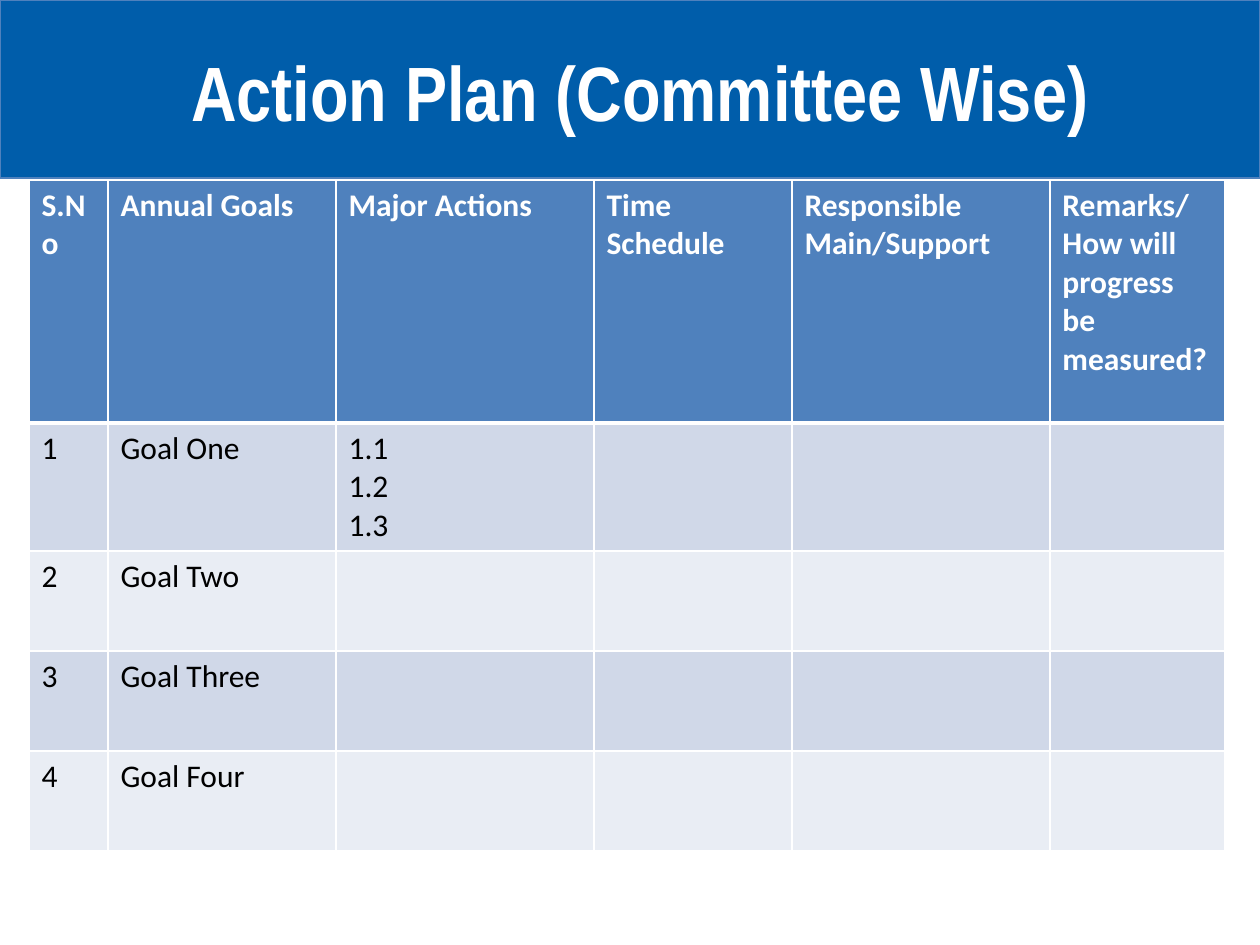
from lxml.etree import SubElement as Sub
from pptx import Presentation
from pptx.dml.color import RGBColor
from pptx.enum.shapes import MSO_SHAPE as Shape
from pptx.enum.text import MSO_ANCHOR as Anchor, PP_ALIGN as Align
from pptx.oxml.ns import qn
from pptx.util import Pt

PX = 914400 / 126
WHITE, BLUE = "FFFFFF", "4F81BD"


def px(*nums):
    return [round(n * PX) for n in nums]


def color(code):
    return RGBColor.from_string(code)


deck = Presentation()
deck.slide_width, deck.slide_height = px(1260, 945)
slide = deck.slides.add_slide(deck.slide_layouts[5])

# Title
title = slide.shapes.title
title.left, title.top, title.width, title.height = px(47, 48, 1187, 103)
frame = title.text_frame
frame.text = "Action Plan (Committee Wise)"
frame.word_wrap = True
frame.vertical_anchor = Anchor.MIDDLE
para = frame.paragraphs[0]
para.alignment = Align.CENTER
para.line_spacing = 0.8
font = para.runs[0].font
font.name, font.size, font.bold = "Arial Narrow", Pt(44), True
font.color.rgb = color(WHITE)

# Blue band behind the title
band = slide.shapes.add_shape(Shape.RECTANGLE, *px(0, 0, 1260, 178))
band.shadow.inherit = False
band.fill.solid()
band.fill.fore_color.rgb = color("005DAA")
band.line.color.rgb = color(BLUE)
band.line.width = Pt(0.75)
title.element.addprevious(band.element)

# Action plan table
head = ["S.No", "Annual Goals", "Major Actions", "Time Schedule",
        "Responsible\nMain/Support", "Remarks/ How will progress be measured?"]
goals = ["One", "Two", "Three", "Four"]
rows = [head] + [[str(n), f"Goal {goal}", "", "", "", ""]
                 for n, goal in enumerate(goals, 1)]
rows[1][2] = "1.1\n1.2\n1.3"
wide = px(79, 228, 258, 198, 258, 175)
high = px(243, 128, 100, 100, 100)

left, top = px(29, 180)
table = slide.shapes.add_table(len(rows), len(head), left, top,
                               sum(wide), sum(high)).table
for col, size in zip(table.columns, wide):
    col.width = size
for row, size in zip(table.rows, high):
    row.height = size

for r, row in enumerate(rows):
    for c, text in enumerate(row):
        cell = table.cell(r, c)
        cell.text_frame.text = text
        for para in cell.text_frame.paragraphs:
            font = para.font
            font.size = Pt(18)
            for run in para.runs:
                font = run.font
                font.name, font.size, font.bold = "Calibri", Pt(18), r == 0
                font.color.rgb = color("000000" if r else WHITE)

        # White borders, thicker under the header
        props = cell._tc.get_or_add_tcPr()
        for side in ("lnL", "lnR", "lnT", "lnB"):
            thick = (r, side) in ((0, "lnB"), (1, "lnT"))
            line = Sub(props, qn(f"a:{side}"), w=str(Pt(3 if thick else 1)))
            Sub(Sub(line, qn("a:solidFill")), qn("a:srgbClr"), val=WHITE)
        cell.fill.solid()
        shade = BLUE if r == 0 else ("E9EDF4", "D0D8E8")[r % 2]
        cell.fill.fore_color.rgb = color(shade)

deck.save("out.pptx")
